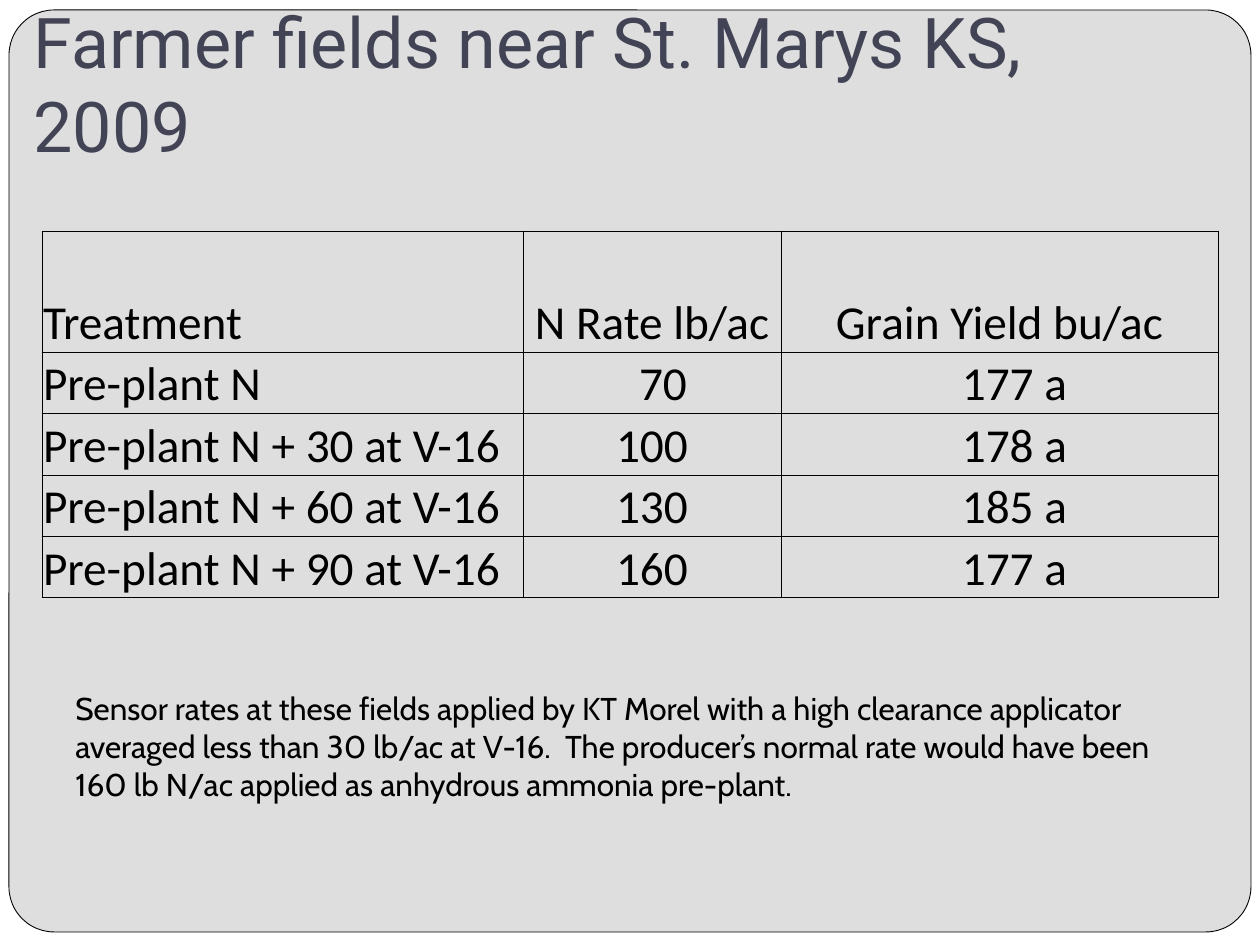
from dataclasses import dataclass

from lxml import etree
from pptx import Presentation, util as u
from pptx.dml.color import RGBColor
from pptx.enum import shapes, text
from pptx.oxml import ns

EMU_PER_PX = 914400 / 126


@dataclass(frozen=True)
class Theme:
    paper: str = "FFFFFF"
    panel: str = "DEDEDE"
    ink: str = "000000"
    heading: str = "424456"
    heading_font: str = "Roboto"
    table_font: str = "Calibri"
    note_font: str = "Cabin"
    heading_size: int = 40
    table_size: int = 27
    note_size: int = 18
    rule: float = 0.5


@dataclass(frozen=True)
class Box:
    left: int
    top: int
    width: int
    height: int

    def emu(self) -> tuple:
        return px(self.left), px(self.top), px(self.width), px(self.height)


@dataclass(frozen=True)
class Treatment:
    name: str
    rate: str
    grain: str
    rate_indent: int = 1


THEME = Theme()
PANEL = Box(9, 10, 1242, 922)
TITLE = Box(21, 21, 1176, 158)
TABLE = Box(42, 231, 1176, 367)
NOTE = Box(63, 683, 1144, 126)
COLUMNS = (481, 258, 437)
ROWS = (121, 61, 62, 61, 62)
YIELD_INDENT = 31

HEADINGS = ("Treatment", "N Rate lb/ac", "Grain Yield bu/ac")
TREATMENTS = (
    Treatment("Pre-plant N", "70", "177 a", rate_indent=23),
    Treatment("Pre-plant N + 30 at V-16", "100", "178 a"),
    Treatment("Pre-plant N + 60 at V-16", "130", "185 a"),
    Treatment("Pre-plant N + 90 at V-16", "160", "177 a"),
)
NOTE_TEXT = (
    "Sensor rates at these fields applied by KT Morel with a high clearance "
    "applicator averaged less than 30 lb/ac at V-16.  The producer’s normal "
    "rate would have been 160 lb N/ac applied as anhydrous ammonia pre-plant."
)


def px(length: int) -> u.Emu:
    return u.Emu(round(length * EMU_PER_PX))


def write(frame, words: str, *, font: str, size: int, color: str,
          align=text.PP_ALIGN.LEFT) -> None:
    para = frame.paragraphs[0]
    para.alignment = align
    span = para.add_run()
    span.text = words
    span.font.name = font
    span.font.size = u.Pt(size)
    span.font.bold = False
    span.font.color.rgb = RGBColor.from_string(color)


def draw_panel(page) -> None:
    panel = page.shapes.add_shape(shapes.MSO_SHAPE.ROUNDED_RECTANGLE, *PANEL.emu())
    panel.adjustments[0] = 0.049
    panel.shadow.inherit = False
    panel.fill.solid()
    panel.fill.fore_color.rgb = RGBColor.from_string(THEME.panel)
    panel.line.color.rgb = RGBColor.from_string(THEME.ink)
    panel.line.width = u.Pt(THEME.rule)


def draw_title(page, words: str) -> None:
    title = page.shapes.title
    title.left, title.top, title.width, title.height = TITLE.emu()
    frame = title.text_frame
    frame.word_wrap = True
    frame.auto_size = text.MSO_AUTO_SIZE.NONE
    frame.vertical_anchor = text.MSO_ANCHOR.BOTTOM
    frame.margin_bottom = u.Inches(0.1)
    write(frame, words, font=THEME.heading_font, size=THEME.heading_size,
          color=THEME.heading)
    # Bring the title in front of the panel
    page.shapes._spTree.append(title._element)


def border_cell(cell) -> None:
    properties = cell._tc.get_or_add_tcPr()
    for index, side in enumerate(("lnL", "lnR", "lnT", "lnB")):
        line = etree.Element(ns.qn(f"a:{side}"), w=str(u.Pt(THEME.rule)))
        fill = etree.SubElement(line, ns.qn("a:solidFill"))
        etree.SubElement(fill, ns.qn("a:srgbClr"), val=THEME.ink)
        properties.insert(index, line)


def fill_cell(cell, words: str, *, align, indent: int = 1) -> None:
    cell.fill.background()
    cell.vertical_anchor = text.MSO_ANCHOR.BOTTOM
    cell.margin_left = px(indent)
    cell.margin_right = cell.margin_top = px(1)
    cell.margin_bottom = 0
    write(cell.text_frame, words, font=THEME.table_font, size=THEME.table_size,
          color=THEME.ink, align=align)
    border_cell(cell)


def draw_table(page) -> None:
    table = page.shapes.add_table(len(ROWS), len(COLUMNS), *TABLE.emu()).table
    table.first_row = table.horz_banding = False
    for column, width in zip(table.columns, COLUMNS):
        column.width = px(width)
    for row, height in zip(table.rows, ROWS):
        row.height = px(height)

    lines = [(HEADINGS, (1, 1, 1))]
    lines += [((t.name, t.rate, t.grain), (1, t.rate_indent, YIELD_INDENT))
              for t in TREATMENTS]
    aligns = (text.PP_ALIGN.LEFT, text.PP_ALIGN.CENTER, text.PP_ALIGN.CENTER)
    for row, (words, indents) in zip(table.rows, lines):
        for cell, word, indent, align in zip(row.cells, words, indents, aligns):
            fill_cell(cell, word, align=align, indent=indent)


def draw_note(page) -> None:
    frame = page.shapes.add_textbox(*NOTE.emu()).text_frame
    frame.word_wrap = True
    frame.auto_size = text.MSO_AUTO_SIZE.SHAPE_TO_FIT_TEXT
    write(frame, NOTE_TEXT, font=THEME.note_font, size=THEME.note_size,
          color=THEME.ink)


def main() -> None:
    deck = Presentation()
    deck.slide_width, deck.slide_height = px(1260), px(945)
    page = deck.slides.add_slide(deck.slide_layouts[5])
    page.background.fill.solid()
    page.background.fill.fore_color.rgb = RGBColor.from_string(THEME.paper)

    # Rounded backdrop and heading
    draw_panel(page)
    draw_title(page, "Farmer fields near St. Marys KS, 2009")
    # Yield results and the remark below them
    draw_table(page)
    draw_note(page)
    deck.save("out.pptx")


if __name__ == "__main__":
    main()
